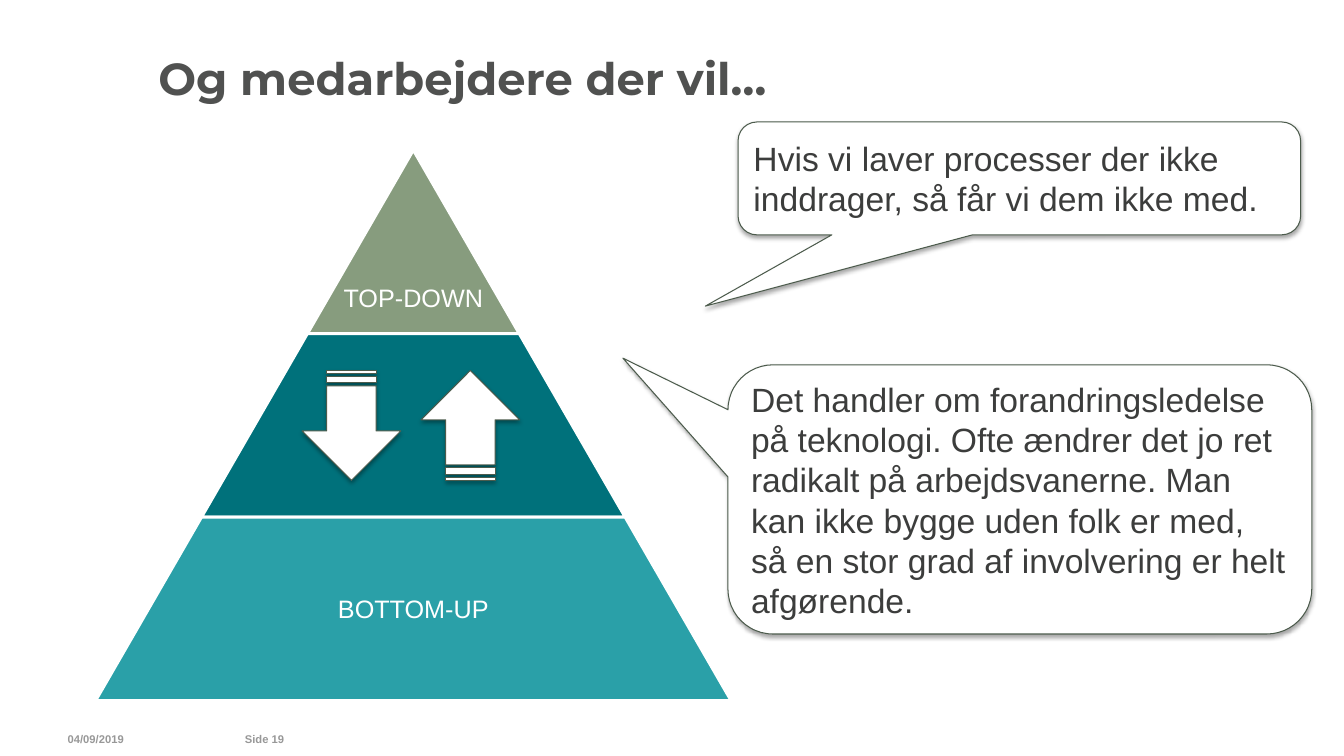
from lxml import etree
from pptx import Presentation, util as u
from pptx.dml.color import RGBColor
from pptx.enum import shapes as sh, text as tx
from pptx.oxml import ns

WIDE, HIGH = 13.33, 7.5
WHITE, EDGE, INK, GREY = "FFFFFF", "4C5B4C", "3C3D3C", "989898"
TIERS = [("879C7E", "TOP-DOWN", 0.8), ("00717B", "", 0.5), ("2AA0A8", "BOTTOM-UP", 0.5)]
TALKS = [
    ((7.22, 3.62, 5.79, 2.67), (-0.68, -0.525, 0.167),
     "Det handler om forandringsledelse på teknologi. Ofte ændrer det jo ret "
     "radikalt på arbejdsvanerne. Man kan ikke bygge uden folk er med, så en "
     "stor grad af involvering er helt afgørende."),
    ((7.32, 1.21, 5.58, 1.12), (-0.558, 1.131, 0.167),
     "Hvis vi laver processer der ikke inddrager, så får vi dem ikke med."),
]


def paint(form, color):
    """Set a solid colour on a font, fill or line holder."""
    if hasattr(form, "solid"):
        form.solid()
        form = form.fore_color
    else:
        form = form.color
    form.rgb = RGBColor.from_string(color)


def write(frame, words, size, color, bold=False, face="Arial", align=tx.PP_ALIGN.LEFT):
    """Fill a text frame with one run, centred in height."""
    frame.word_wrap = True
    frame.vertical_anchor = tx.MSO_ANCHOR.MIDDLE
    para = frame.paragraphs[0]
    para.alignment = align
    run = para.add_run()
    run.text = words
    run.font.name, run.font.size, run.font.bold = face, u.Pt(size), bold
    paint(run.font, color)


def label(slide, box, words, size, color, inset=(0, 0), **style):
    """Place a text box with its left and right insets."""
    frame = slide.shapes.add_textbox(*map(u.Inches, box)).text_frame
    frame.margin_left, frame.margin_right = map(u.Inches, inset)
    frame.margin_top = frame.margin_bottom = 0
    write(frame, words, size, color, **style)


def draw(slide, kind, box, fill, edge, width, adjust=()):
    """Place a preset shape with flat fill and line."""
    shape = slide.shapes.add_shape(kind, *map(u.Inches, box))
    for spot, value in enumerate(adjust):
        shape.adjustments[spot] = value
    paint(shape.fill, fill)
    paint(shape.line, edge)
    shape.line.width = u.Pt(width)
    shape.shadow.inherit = False
    return shape


def lift(shape):
    """Give a shape a soft shadow below it."""
    effects = shape._element.spPr.find(ns.qn("a:effectLst"))
    drop = etree.SubElement(effects, ns.qn("a:outerShdw"), blurRad=str(u.Pt(3.1)),
                            dist=str(u.Pt(1.8)), dir="5400000", rotWithShape="0")
    tone = etree.SubElement(drop, ns.qn("a:srgbClr"), val="000000")
    etree.SubElement(tone, ns.qn("a:alpha"), val="35000")


def pyramid(slide, box):
    """Stack the tiers, each one step wider than the tier above."""
    left, top, wide, high = box
    step, tall = wide / len(TIERS), high / len(TIERS)
    for row, (fill, words, share) in enumerate(TIERS):
        span = step * (row + 1)
        start, y = left + (wide - span) / 2, top + tall * row
        draw(slide, sh.MSO_SHAPE.TRAPEZOID, (start, y, span, tall), fill, WHITE, 2,
             [step / 2 / tall])
        if words:
            label(slide, (start, y + tall * share - 0.2, span, 0.4), words, 18, WHITE,
                  align=tx.PP_ALIGN.CENTER)


def arrows(slide, box):
    """Set a down and an up arrow side by side."""
    left, top, wide, high = box
    for col, turn in enumerate((90, 270)):
        arrow = draw(slide, sh.MSO_SHAPE.STRIPED_RIGHT_ARROW,
                     (left + col * (wide + 0.09), top, wide, high), WHITE, EDGE, 0.75)
        arrow.rotation = turn
        lift(arrow)


def callout(slide, box, adjust, words):
    """Place a speech bubble with its words."""
    bubble = draw(slide, sh.MSO_SHAPE.ROUNDED_RECTANGULAR_CALLOUT, box, WHITE, EDGE,
                  0.75, adjust)
    lift(bubble)
    write(bubble.text_frame, words, 24, INK)


def footer(slide, box):
    """Place the date and the page number."""
    left, top, wide, high = box
    label(slide, (left, top, 1.78, high), "04/09/2019", 8, GREY, (0, 0.1), bold=True)
    label(slide, (left + wide - 1.33, top, 1.33, high), "Side 19", 8, GREY, (0.1, 0.1),
          bold=True)


def main():
    """Build and save the slide."""
    deck = Presentation()
    deck.slide_width, deck.slide_height = u.Inches(WIDE), u.Inches(HIGH)
    slide = deck.slides.add_slide(deck.slide_layouts[6])
    footer(slide, (0.67, 7.13, 2.99, 0.4))
    label(slide, (1.57, 0.5, 11.02, 0.54), "Og medarbejdere der vil…", 32, "505150",
          bold=True, face="Montserrat")
    pyramid(slide, (0.95, 1.49, 6.3, 5.46))
    arrows(slide, (2.94, 3.73, 1.09, 0.98))
    for talk in TALKS:
        callout(slide, *talk)
    deck.save("out.pptx")


if __name__ == "__main__":
    main()
